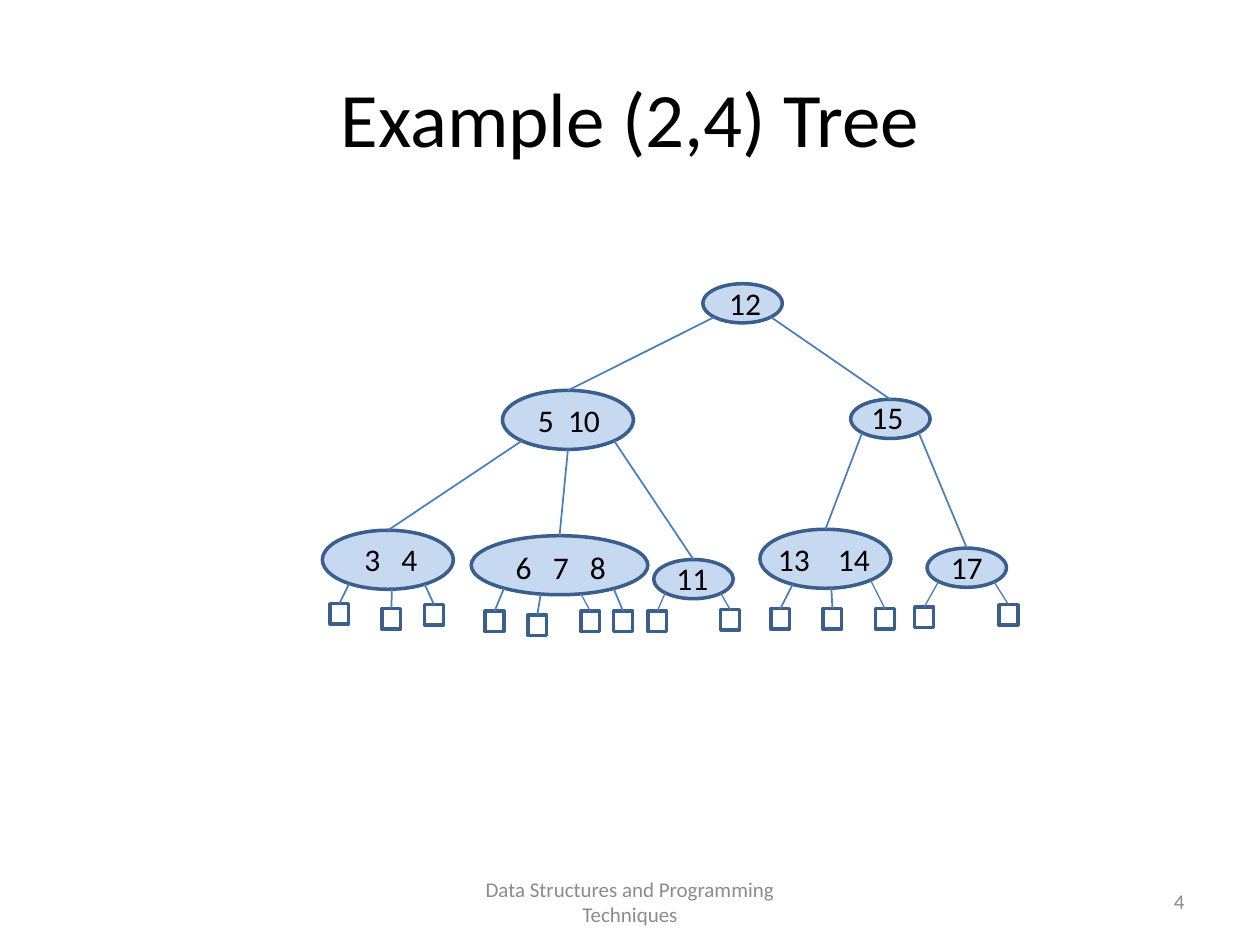
from math import sqrt

from lxml import etree
from pptx import Presentation
from pptx.dml.color import RGBColor
from pptx.enum.shapes import MSO_CONNECTOR, MSO_SHAPE
from pptx.enum.text import MSO_ANCHOR, PP_ALIGN
from pptx.oxml.ns import qn
from pptx.util import Cm, Pt

STRAIGHT = MSO_CONNECTOR.STRAIGHT
OVAL, RECTANGLE = MSO_SHAPE.OVAL, MSO_SHAPE.RECTANGLE
CENTER, RIGHT = PP_ALIGN.CENTER, PP_ALIGN.RIGHT
TOP, MIDDLE = MSO_ANCHOR.TOP, MSO_ANCHOR.MIDDLE

COLORS = {
    "text": "000000",
    "footer": "8C8C8C",
    "node": "C6D9F1",
    "outline": "3A5F8C",
    "edge": "4B7EBC",
}
FONT = "Calibri"
SMALL, MEDIUM, LARGE = (1.6, 0.79), (2.64, 1.19), (3.56, 1.19)
LEAF_SIZE = (0.38, 0.41)
TOP_SITE = 0

# Keys: left, top and size of the node; left, top and width of its label;
# extra points between the keys
NODES = {
    "12": (14.17, 5.72, SMALL, (14.4, 5.61, 1.24), 0),
    "5 10": (10.13, 7.87, MEDIUM, (10.57, 7.95, 1.8), 4),
    "15": (17.15, 8.05, SMALL, (17.27, 7.9, 1.24), 0),
    "3 4": (6.5, 10.69, MEDIUM, (6.65, 10.77, 2.46), 8),
    "6 7 8": (9.5, 10.8, LARGE, (10.11, 10.92, 2.39), 8),
    "11": (13.18, 11.28, SMALL, (13.34, 11.15, 1.24), 0),
    "13 14": (15.32, 10.67, MEDIUM, (15.39, 10.77, 2.44), 12),
    "17": (18.69, 11.05, SMALL, (18.87, 10.92, 1.24), 0),
}

# Parent, child, x where the edge leaves the parent
BRANCHES = [
    ("12", "5 10", 14.4), ("12", "15", 15.54),
    ("5 10", "3 4", 10.52), ("5 10", "6 7 8", 11.45), ("5 10", "11", 12.38),
    ("15", "13 14", 17.38), ("15", "17", 18.52),
]

# Parent: left and top of each leaf, x where its edge leaves, edge width
LEAVES = {
    "3 4": [(6.65, 12.17, 7.04, 1), (7.7, 12.27, 7.9, 1), (8.56, 12.19, 8.56, 1)],
    "6 7 8": [(9.78, 12.32, 10.16, 1), (10.64, 12.4, 10.9, 1),
              (11.71, 12.32, 11.71, 0.75), (12.37, 12.32, 12.37, 1)],
    "11": [(13.06, 12.32, 13.41, 0.75), (14.53, 12.29, 14.53, 0.75)],
    "13 14": [(15.54, 12.27, 15.98, 1), (16.59, 12.27, 16.76, 1),
              (17.65, 12.27, 17.55, 0.75)],
    "17": [(18.44, 12.24, 18.92, 0.75), (20.14, 12.19, 20.04, 0.75)],
}


def color(name):
    return RGBColor.from_string(COLORS[name])


def lower_curve(node, x):
    """Height of the lower half of a node's ellipse at x."""
    left, top, (width, height) = NODES[node][:3]
    offset = (x - left - width / 2) / (width / 2)
    return top + height / 2 * (1 + sqrt(1 - offset ** 2))


class TreeSlide:
    def __init__(self, slide):
        self.slide = slide

    def format_text(self, frame, size, color_name, align, anchor):
        frame.vertical_anchor = anchor
        for paragraph in frame.paragraphs:
            paragraph.alignment = align
            for run in paragraph.runs:
                run.font.name = FONT
                run.font.size = Pt(size)
                run.font.color.rgb = color(color_name)

    def title(self, text, left, top, width, height):
        shape = self.slide.shapes.title
        shape.left, shape.top = Cm(left), Cm(top)
        shape.width, shape.height = Cm(width), Cm(height)
        shape.text_frame.text = text
        self.format_text(shape.text_frame, 44, "text", CENTER, MIDDLE)

    def text(self, text, left, top, width, size, color_name, align, anchor):
        box = self.slide.shapes.add_textbox(Cm(left), Cm(top), Cm(width), Cm(1.02))
        frame = box.text_frame
        frame.word_wrap = True
        frame.text = text
        self.format_text(frame, size, color_name, align, anchor)

    def label(self, text, left, top, width, gap):
        box = self.slide.shapes.add_textbox(Cm(left), Cm(top), Cm(width), Cm(1.02))
        frame = box.text_frame
        frame.word_wrap = True
        paragraph = frame.paragraphs[0]
        for number, key in enumerate(text.split()):
            if number:
                space = paragraph.add_run()
                space.text = " "
                # Widen the single space by character spacing
                space.font._element.set("spc", str(gap * 100))
            paragraph.add_run().text = key
        self.format_text(frame, 18, "text", CENTER, TOP)

    def shape(self, kind, left, top, size, fill=None):
        width, height = size
        shape = self.slide.shapes.add_shape(
            kind, Cm(left), Cm(top), Cm(width), Cm(height))
        shape.shadow.inherit = False
        if fill:
            shape.fill.solid()
            shape.fill.fore_color.rgb = color(fill)
        else:
            shape.fill.background()
        shape.line.color.rgb = color("outline")
        shape.line.width = Pt(2)
        return shape

    def edge(self, parent, x, child, width):
        y = lower_curve(parent, x)
        connector = self.slide.shapes.add_connector(
            STRAIGHT, Cm(x), Cm(y), Cm(x), Cm(y))
        connector.end_connect(child, TOP_SITE)
        connector.line.color.rgb = color("edge")
        connector.line.width = Pt(width)
        etree.SubElement(connector._element.spPr, qn("a:effectLst"))


def main():
    presentation = Presentation()
    presentation.slide_width, presentation.slide_height = Cm(25.4), Cm(19.05)
    tree = TreeSlide(presentation.slides.add_slide(presentation.slide_layouts[5]))

    # Title and footer
    tree.title("Example (2,4) Tree", 1.27, 0.76, 22.86, 3.18)
    tree.text("Data Structures and Programming Techniques",
              8.68, 17.66, 8.04, 12, "footer", CENTER, MIDDLE)
    tree.text("4", 18.2, 17.66, 5.93, 12, "footer", RIGHT, MIDDLE)

    # Nodes and the edges between them
    nodes = {keys: tree.shape(OVAL, left, top, size, "node")
             for keys, (left, top, size, _, _) in NODES.items()}
    for parent, child, x in BRANCHES:
        tree.edge(parent, x, nodes[child], 1)

    # Leaves
    for parent, leaves in LEAVES.items():
        for left, top, x, width in leaves:
            leaf = tree.shape(RECTANGLE, left, top, LEAF_SIZE)
            tree.edge(parent, x, leaf, width)

    # Keys in the nodes
    for keys, (_, _, _, place, gap) in NODES.items():
        tree.label(keys, *place, gap)

    presentation.save("out.pptx")


if __name__ == "__main__":
    main()
